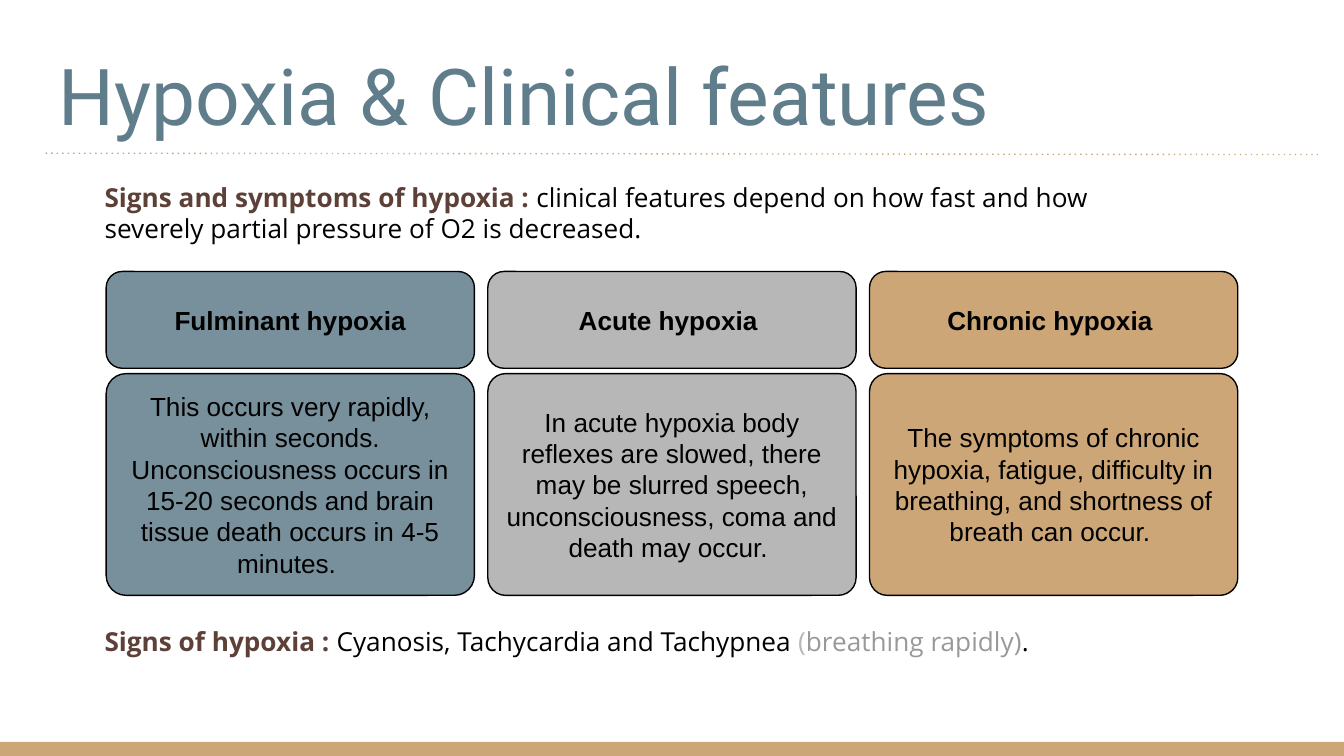
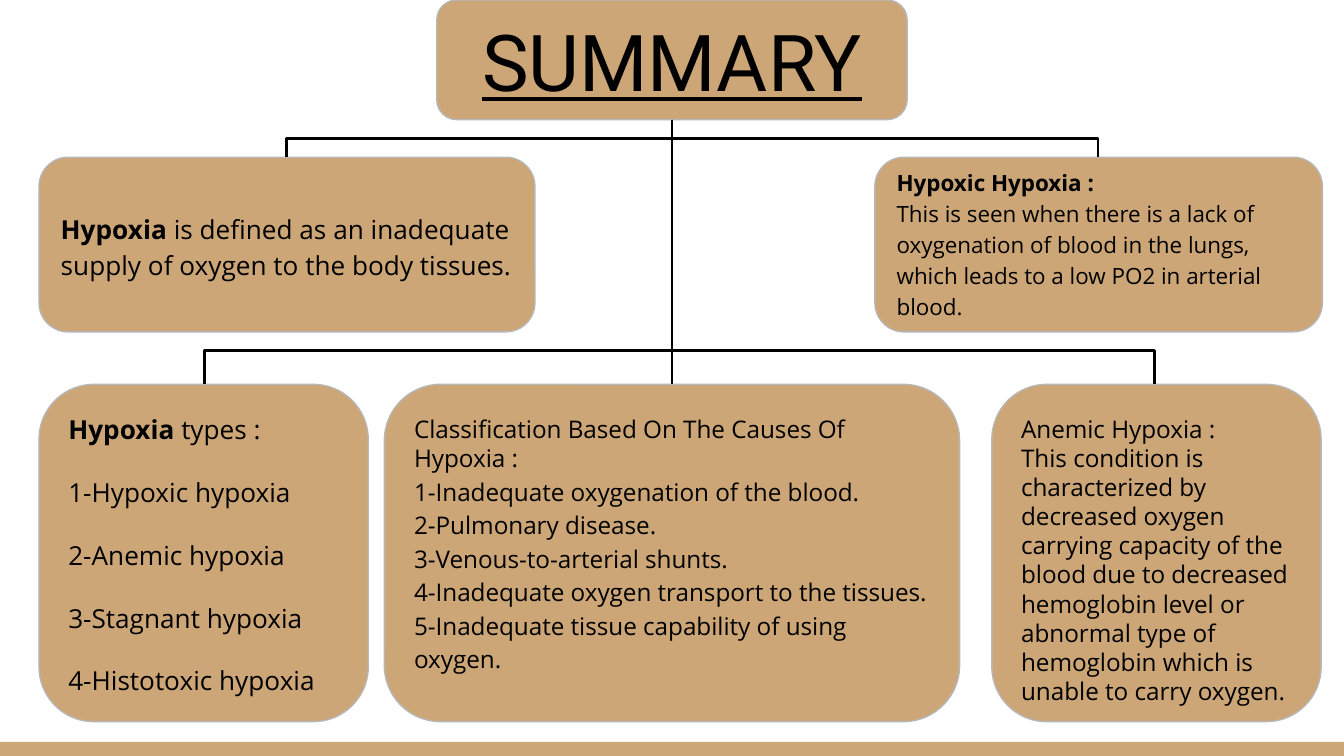
from dataclasses import dataclass
from typing import Optional

from pptx import Presentation
from pptx.dml.color import RGBColor
from pptx.enum.dml import MSO_LINE
from pptx.enum.shapes import MSO_CONNECTOR as CONN, MSO_SHAPE as SHAPE
from pptx.enum.text import MSO_ANCHOR as ANCHOR, PP_ALIGN as ALIGN
from pptx.oxml.ns import qn
from pptx.oxml.xmlchemy import OxmlElement
from pptx.shapes.autoshape import Shape
from pptx.shapes.connector import Connector
from pptx.slide import Slide
from pptx.text.text import TextFrame
from pptx.util import Inches, Pt

TAN = RGBColor(0xCC, 0xA6, 0x77)
STEEL = RGBColor(0x78, 0x90, 0x9C)
SLATE = RGBColor(0x60, 0x7D, 0x8B)
BROWN = RGBColor(0x5D, 0x40, 0x37)
SILVER = RGBColor(0xB7, 0xB7, 0xB7)
GRAY = RGBColor(0x99, 0x99, 0x99)
BLACK = RGBColor(0, 0, 0)

TITLE_FONT, BODY_FONT, CARD_FONT = "Roboto", "Open Sans", "Arial"
TITLE_SIZE = 42
SLIDE_W = 10
SLIDE_H = SLIDE_W * 9 / 16
BAND_TOP = 5.52


@dataclass(frozen=True)
class Run:
    text: str
    bold: Optional[bool] = None
    color: Optional[RGBColor] = None


@dataclass(frozen=True)
class Para:
    runs: tuple[Run, ...]
    spacing: Optional[float] = None
    before: float = 0
    after: float = 0


@dataclass(frozen=True)
class Style:
    font: str = BODY_FONT
    size: float = 14
    color: RGBColor = BLACK
    bold: Optional[bool] = None
    underline: Optional[bool] = None
    align: ALIGN = ALIGN.LEFT
    anchor: ANCHOR = ANCHOR.TOP


@dataclass(frozen=True)
class Box:
    left: float
    top: float
    width: float
    height: float
    paras: tuple[Para, ...]
    style: Style = Style()
    fill: RGBColor = TAN
    line: RGBColor = SILVER
    corner: Optional[float] = None
    kind: SHAPE = SHAPE.ROUNDED_RECTANGLE


@dataclass(frozen=True)
class Stage:
    name: str
    text: str
    fill: RGBColor
    corner: float
    head_kind: SHAPE = SHAPE.ROUNDED_RECTANGLE


def plain(text: str, **options: float) -> Para:
    return Para((Run(text),), **options)


def write(tf: TextFrame, paras: tuple[Para, ...], style: Style) -> None:
    tf.word_wrap = True
    tf.vertical_anchor = style.anchor
    tf.margin_left = tf.margin_right = Inches(0.1)
    tf.margin_top = tf.margin_bottom = Inches(0.1)
    for i, para in enumerate(paras):
        p = tf.add_paragraph() if i else tf.paragraphs[0]
        p.alignment = style.align
        p.space_before = Pt(para.before)
        p.space_after = Pt(para.after)
        p.line_spacing = para.spacing
        font = p.font
        font.name, font.size = style.font, Pt(style.size)
        font.bold, font.underline = style.bold, style.underline
        font.color.rgb = style.color
        for run in para.runs:
            r = p.add_run()
            r.text = run.text
            if run.bold is not None:
                r.font.bold = run.bold
            if run.color is not None:
                r.font.color.rgb = run.color


def add_text(s: Slide, left: float, top: float, width: float, height: float,
             runs: tuple[Run, ...], style: Style = Style()) -> None:
    tb = s.shapes.add_textbox(Inches(left), Inches(top), Inches(width), Inches(height))
    write(tb.text_frame, (Para(runs),), style)


def add_box(s: Slide, box: Box) -> Shape:
    sp = s.shapes.add_shape(box.kind, Inches(box.left), Inches(box.top),
                            Inches(box.width), Inches(box.height))
    sp.shadow.inherit = False
    sp.fill.solid()
    sp.fill.fore_color.rgb = box.fill
    sp.line.color.rgb = box.line
    sp.line.width = Pt(0.75)
    if box.corner is not None:
        sp.adjustments[0] = box.corner
    write(sp.text_frame, box.paras, box.style)
    return sp


def add_line(s: Slide, x1: float, y1: float, x2: float, y2: float,
             color: RGBColor = BLACK, width: float = 1.5,
             kind: CONN = CONN.STRAIGHT) -> Connector:
    c = s.shapes.add_connector(kind, Inches(x1), Inches(y1), Inches(x2), Inches(y2))
    c.line.color.rgb = color
    c.line.width = Pt(width)
    c._element.spPr.append(OxmlElement("a:effectLst"))
    return c


def add_branch(s: Slide, x1: float, y1: float, x2: float, y2: float) -> None:
    cx, cy = (x1 + x2) / 2, (y1 + y2) / 2
    half_w, half_h = (y2 - y1) / 2, abs(x2 - x1) / 2
    side = 1 if x2 < x1 else -1
    c = add_line(s, cx - side * half_w, cy - half_h, cx + side * half_w, cy + half_h,
                 kind=CONN.ELBOW)
    degrees = 90 if x2 < x1 else 270
    c._element.spPr.find(qn("a:xfrm")).set("rot", str(degrees * 60000))


def add_corner(s: Slide, x1: float, y1: float, x2: float, y2: float) -> None:
    c = add_line(s, x1, y1, x2, y2, kind=CONN.ELBOW)
    c._element.spPr.find(qn("a:prstGeom")).set("prst", "bentConnector2")


def new_slide(prs: Presentation) -> Slide:
    s = prs.slides.add_slide(prs.slide_layouts[6])
    band = s.shapes.add_shape(SHAPE.RECTANGLE, 0, Inches(BAND_TOP), Inches(SLIDE_W),
                              Inches(SLIDE_H - BAND_TOP))
    band.shadow.inherit = False
    band.fill.solid()
    band.fill.fore_color.rgb = TAN
    band.line.fill.background()
    return s


STAGES = (
    Stage("Fulminant hypoxia",
          "This occurs very rapidly, within seconds. Unconsciousness occurs in "
          "15-20 seconds and brain tissue death occurs in 4-5 minutes. ", STEEL, 0.09),
    Stage("Acute hypoxia ",
          "In acute hypoxia body reflexes are slowed, there may be slurred speech, "
          "unconsciousness, coma and death may occur. ", SILVER, 0.08,
          SHAPE.FLOWCHART_ALTERNATE_PROCESS),
    Stage("Chronic hypoxia ",
          "The symptoms of chronic hypoxia, fatigue, difficulty in breathing, and "
          "shortness of breath can occur. ", TAN, 0.08),
)


def build_features(prs: Presentation) -> None:
    s = new_slide(prs)
    add_text(s, 0.34, 0.24, 9.32, 0.91, (Run("Hypoxia & Clinical features"),),
             Style(TITLE_FONT, TITLE_SIZE, SLATE, anchor=ANCHOR.BOTTOM))
    add_text(s, 0.68, 1.25, 8, 0.72, (
        Run("Signs and symptoms of hypoxia : ", True, BROWN),
        Run("clinical features depend on how fast and how severely partial "
            "pressure of O2 is decreased.")))
    rule = add_line(s, 0.34, 1.14, 9.83, 1.15, TAN, 0.75)
    rule.line.dash_style = MSO_LINE.ROUND_DOT
    rule._element.spPr.find(".//" + qn("a:prstDash")).set("val", "dot")
    add_text(s, 0.68, 4.55, 8, 0.53, (
        Run("Signs of hypoxia : ", True, BROWN),
        Run("Cyanosis, Tachycardia and Tachypnea "),
        Run("(", color=SILVER),
        Run("breathing rapidly)", color=GRAY),
        Run(".")))

    card = Style(CARD_FONT, align=ALIGN.CENTER, anchor=ANCHOR.MIDDLE)
    head = Style(CARD_FONT, bold=True, align=ALIGN.CENTER, anchor=ANCHOR.MIDDLE)
    for i, stage in enumerate(STAGES):
        left = 0.79 + i * 2.84
        add_box(s, Box(left, 2.78, 2.74, 1.65, (plain(stage.text),), card,
                       stage.fill, BLACK, stage.corner))
        add_box(s, Box(left, 2.02, 2.74, 0.72, (plain(stage.name),), head,
                       stage.fill, BLACK, kind=stage.head_kind))


TYPES = ("1-Hypoxic hypoxia", "2-Anemic hypoxia", "3-Stagnant hypoxia",
         "4-Histotoxic hypoxia")
CAUSES = ("1-Inadequate oxygenation of the blood.", "2-Pulmonary disease.",
          "3-Venous-to-arterial shunts.",
          "4-Inadequate oxygen transport to the tissues.",
          "5-Inadequate tissue capability of using oxygen.")


def build_summary(prs: Presentation) -> None:
    s = new_slide(prs)
    upper, upper_h, lower, lower_h = 1.17, 1.3, 2.86, 2.51
    title_bottom, split, mid = 0.89, 2.61, 5

    title = add_box(s, Box(3.25, 0, 3.5, title_bottom, (plain("SUMMARY"),),
                           Style(TITLE_FONT, TITLE_SIZE, underline=True,
                                 align=ALIGN.CENTER, anchor=ANCHOR.MIDDLE)))
    add_box(s, Box(0.29, upper, 3.69, upper_h, (
        Para((Run("Hypoxia", True),
              Run(" is defined as an inadequate supply of oxygen to the body tissues.")),
             1.15, after=16),), Style(anchor=ANCHOR.MIDDLE)))
    add_box(s, Box(6.51, upper, 3.33, upper_h, (
        Para((Run("Hypoxic Hypoxia :", True),)),
        plain("This is seen when there is a lack of oxygenation of blood in the lungs, "
              "which leads to a low PO2 in arterial blood.", spacing=1.15, after=16),
    ), Style(size=12, anchor=ANCHOR.MIDDLE)))
    add_box(s, Box(0.29, lower, 2.45, lower_h, (
        Para((Run("Hypoxia ", True), Run("types :"))),
        *(plain(name, before=16.8) for name in TYPES))))
    causes = add_box(s, Box(2.86, lower, 4.28, lower_h, (
        plain("Classification Based On The Causes Of Hypoxia :"),
        *(plain(cause, spacing=1.15) for cause in CAUSES)), Style(size=13)))
    add_box(s, Box(7.38, lower, 2.45, lower_h, (
        plain("Anemic Hypoxia :"),
        plain("This condition is characterized by decreased oxygen carrying capacity "
              "of the blood due to decreased hemoglobin level or abnormal type of "
              "hemoglobin which is unable to carry oxygen."),
    ), Style(size=13)))

    trunk = add_line(s, mid, title_bottom, mid, lower)
    trunk.begin_connect(title, 2)
    trunk.end_connect(causes, 0)
    for x in (2.13, 8.17):
        add_branch(s, mid, title_bottom, x, upper)
    for x in (1.52, 8.59):
        add_corner(s, mid, split, x, lower)


def main() -> None:
    prs = Presentation()
    prs.slide_width, prs.slide_height = Inches(SLIDE_W), Inches(SLIDE_H)
    build_features(prs)
    build_summary(prs)
    prs.save("out.pptx")


if __name__ == "__main__":
    main()
